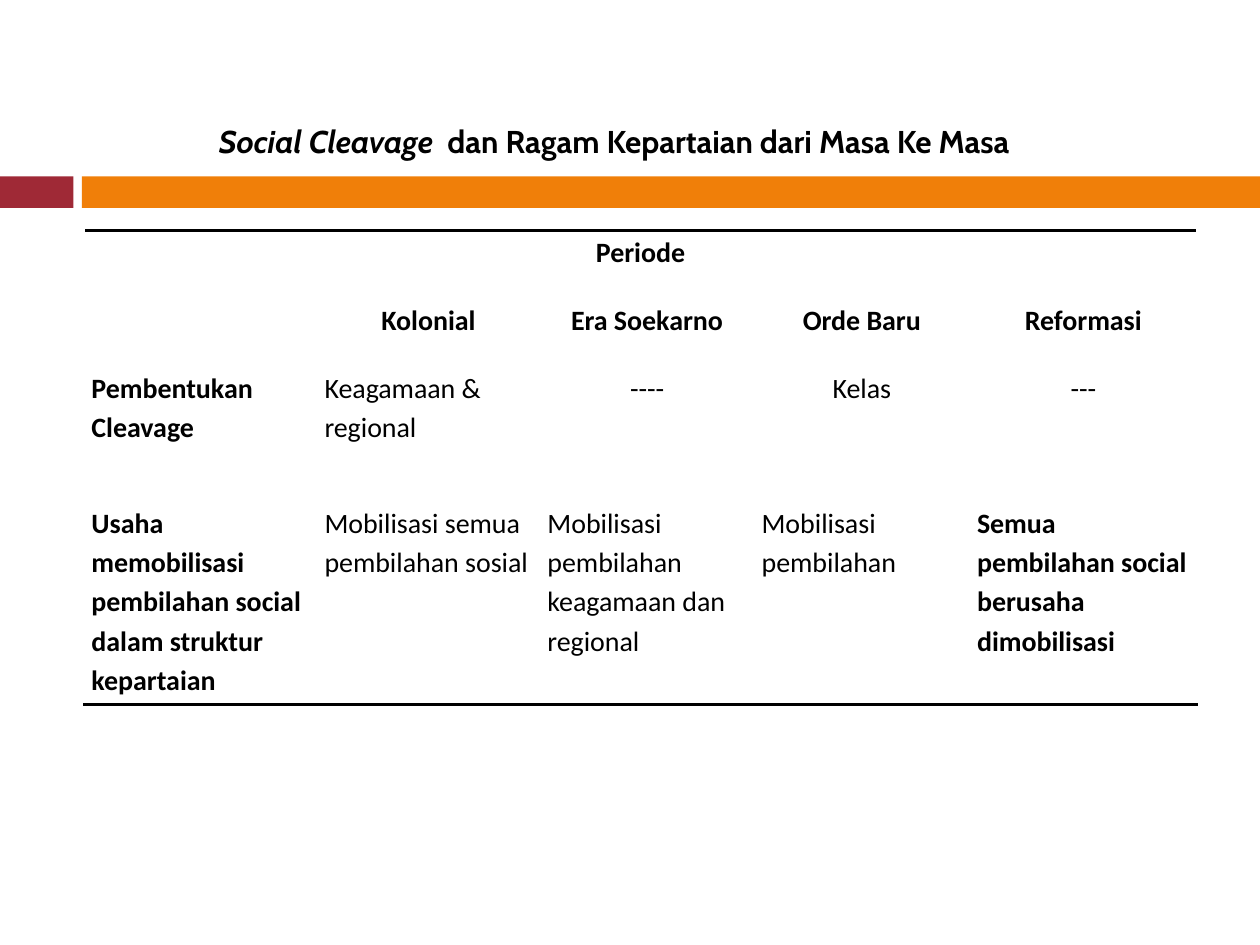
"""Build a slide with a table of social cleavage and party systems by period."""
from lxml.etree import SubElement
from pptx import Presentation
from pptx.dml.color import RGBColor
from pptx.enum.shapes import MSO_SHAPE
from pptx.enum.text import MSO_ANCHOR, PP_ALIGN
from pptx.oxml import parse_xml
from pptx.oxml.ns import nsdecls, qn
from pptx.util import Pt

COLOURS = {"text": "000000", "paper": "FFFFFF", "red": "9F2936", "orange": "F07F09"}
TITLE = [("Social Cleavage  ", True), ("dan Ragam Kepartaian dari Masa Ke Masa", False)]
BARS = [(0, 42, "red"), (46.8, 673.2, "orange")]
COLUMNS = [133.2, 127.4, 122.4, 123.1, 130]
ROWS = [38.9, 38.9, 77, 115.9]
CELLS = [
    ["Periode", "", "", "", ""],
    ["", "Kolonial", "Era Soekarno", "Orde Baru", "Reformasi"],
    ["Pembentukan Cleavage", "Keagamaan & regional", "----", "Kelas", "---"],
    [
        "Usaha memobilisasi pembilahan social dalam struktur kepartaian",
        "Mobilisasi semua pembilahan sosial",
        "Mobilisasi pembilahan keagamaan dan regional",
        "Mobilisasi pembilahan",
        "Semua pembilahan social berusaha dimobilisasi",
    ],
]
LAST_ROW, LAST_COLUMN = len(ROWS) - 1, len(COLUMNS) - 1


def colour(name):
    return RGBColor.from_string(COLOURS[name])


def add_span(para, text, font, size, bold, italic=False):
    span = para.add_run()
    span.text = text
    span.font.name, span.font.size = font, Pt(size)
    span.font.bold, span.font.italic = bold, italic
    span.font.color.rgb = colour("text")


def add_border(cell, side):
    line = parse_xml(f'<a:ln{side} {nsdecls("a")} w="{Pt(2)}"/>')
    fill = SubElement(line, qn("a:solidFill"))
    SubElement(fill, qn("a:srgbClr"), val=COLOURS["text"])
    cell._tc.get_or_add_tcPr().insert(0, line)


def add_bars(page):
    for left, width, name in BARS:
        bar = page.shapes.add_shape(
            MSO_SHAPE.RECTANGLE, Pt(left), Pt(100.8), Pt(width), Pt(18))
        bar.shadow.inherit = False
        bar.fill.solid()
        bar.fill.fore_color.rgb = colour(name)
        bar.line.fill.background()


def fill_cell(cell, row, column, text):
    cell.margin_left = cell.margin_right = Pt(4.3)
    cell.margin_top = cell.margin_bottom = 0
    cell.vertical_anchor = MSO_ANCHOR.TOP
    cell.fill.solid()
    cell.fill.fore_color.rgb = colour("paper")
    if row == 0:
        add_border(cell, "T")
    if row == LAST_ROW:
        add_border(cell, "B")
    if text:
        para = cell.text_frame.paragraphs[0]
        centred = row < 2 or (row == 2 and column > 1)
        para.alignment = PP_ALIGN.CENTER if centred else PP_ALIGN.LEFT
        para.line_spacing = 1.15
        bold = row < 2 or column == 0 or (row, column) == (LAST_ROW, LAST_COLUMN)
        add_span(para, text, "Calibri", 16, bold)


def add_periods(page):
    table = page.shapes.add_table(
        len(ROWS), len(COLUMNS), Pt(48), Pt(131.8), Pt(sum(COLUMNS)), Pt(sum(ROWS))).table
    table.first_row = table.horz_banding = False
    for column, width in zip(table.columns, COLUMNS):
        column.width = Pt(width)
    for row, height in zip(table.rows, ROWS):
        row.height = Pt(height)
    for row, texts in enumerate(CELLS):
        for column, text in enumerate(texts):
            fill_cell(table.cell(row, column), row, column, text)
    table.cell(0, 0).merge(table.cell(0, LAST_COLUMN))


def add_title(page):
    box = page.shapes.add_textbox(Pt(30), Pt(66.2), Pt(642), Pt(29))
    box.text_frame.word_wrap = True
    para = box.text_frame.paragraphs[0]
    para.alignment = PP_ALIGN.CENTER
    for text, italic in TITLE:
        add_span(para, text, "Cabin", 18, True, italic)


def main():
    deck = Presentation()
    deck.slide_width, deck.slide_height = Pt(720), Pt(540)
    page = deck.slides.add_slide(deck.slide_layouts[6])
    add_bars(page)
    add_periods(page)
    add_title(page)
    deck.save("out.pptx")


if __name__ == "__main__":
    main()
